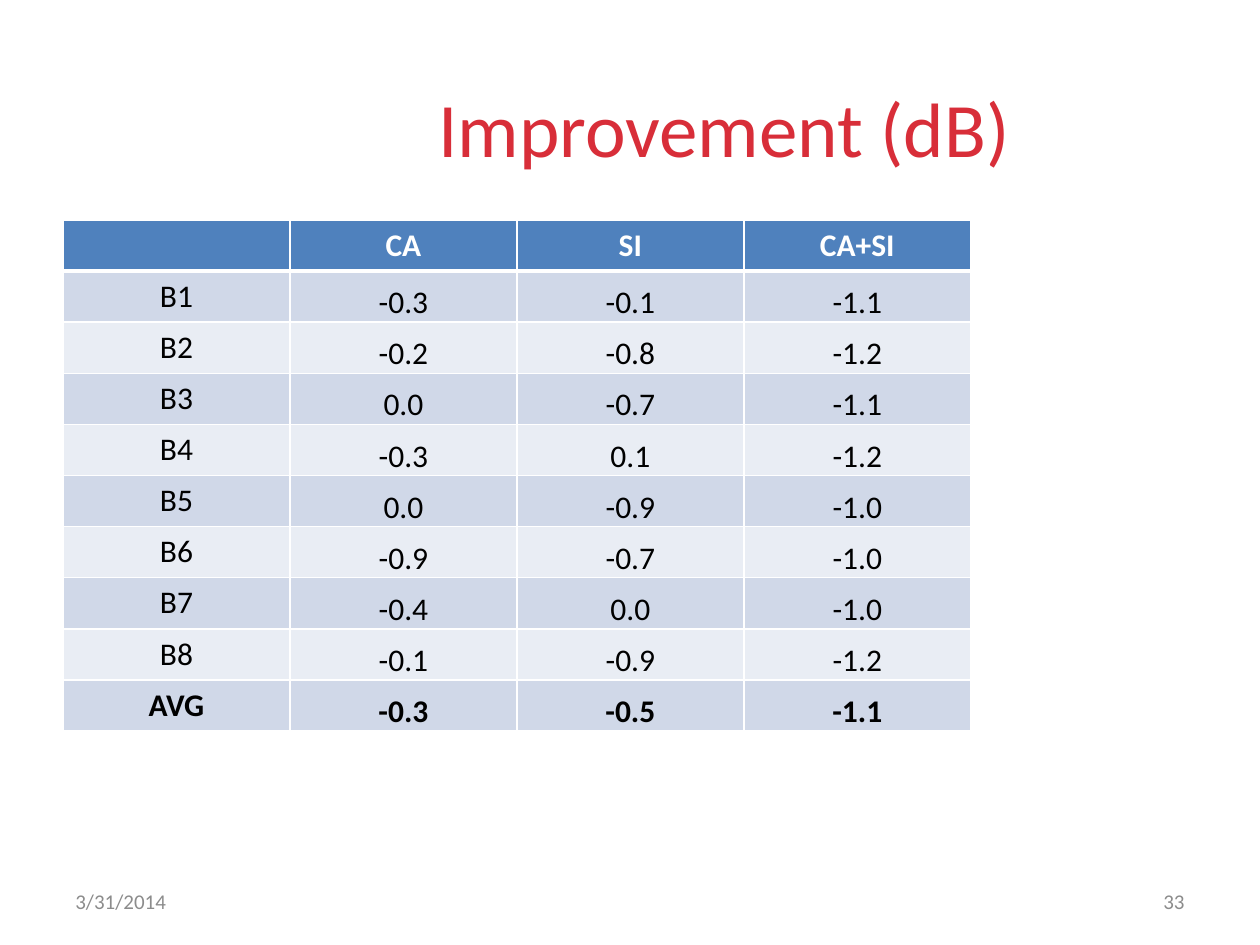
from lxml.etree import SubElement
from pptx import Presentation
from pptx.dml.color import RGBColor
from pptx.enum.text import MSO_ANCHOR, PP_ALIGN
from pptx.oxml.ns import qn
from pptx.util import Pt

TITLE = "Improvement (dB)"
DATE = "3/31/2014"
PAGE_NUMBER = "33"
ROWS = [
    ("", "CA", "SI", "CA+SI"),
    ("B1", "-0.3", "-0.1", "-1.1"),
    ("B2", "-0.2", "-0.8", "-1.2"),
    ("B3", "0.0", "-0.7", "-1.1"),
    ("B4", "-0.3", "0.1", "-1.2"),
    ("B5", "0.0", "-0.9", "-1.0"),
    ("B6", "-0.9", "-0.7", "-1.0"),
    ("B7", "-0.4", "0.0", "-1.0"),
    ("B8", "-0.1", "-0.9", "-1.2"),
    ("AVG", "-0.3", "-0.5", "-1.1"),
]

FONT = "Calibri"
RED = RGBColor(0xD8, 0x2E, 0x39)
GRAY = RGBColor(0x8C, 0x8C, 0x8C)
WHITE = RGBColor(0xFF, 0xFF, 0xFF)
BLACK = RGBColor(0x00, 0x00, 0x00)
HEADER_BLUE = RGBColor(0x4F, 0x81, 0xBD)
BANDS = [RGBColor(0xE9, 0xED, 0xF4), RGBColor(0xD0, 0xD8, 0xE8)]

EMU_PER_PX = 914400 // 126
COLUMN_WIDTH, ROW_HEIGHT = 227, 51


def px(length):
    return round(length * EMU_PER_PX)


def write(frame, text, size, color, align, bold=False):
    para = frame.paragraphs[0]
    para.alignment = align
    if text:
        span = para.add_run()
        span.text = text
        span.font.name = FONT
        span.font.size = Pt(size)
        span.font.bold = bold
        span.font.color.rgb = color


def add_footer(page, text, left, width, align):
    box = page.shapes.add_textbox(px(left), px(876), px(width), px(50))
    box.text_frame.word_wrap = True
    box.text_frame.vertical_anchor = MSO_ANCHOR.MIDDLE
    write(box.text_frame, text, 12, GRAY, align)


def add_borders(cell, top, bottom):
    """Draw white borders; call before the fill is set, as the XML order requires."""
    properties = cell._tc.get_or_add_tcPr()
    for side, points in (("L", 1), ("R", 1), ("T", top), ("B", bottom)):
        line = SubElement(properties, qn(f"a:ln{side}"), w=str(Pt(points)))
        fill = SubElement(line, qn("a:solidFill"))
        SubElement(fill, qn("a:srgbClr"), val=str(WHITE))


def format_cell(cell, text, row, column):
    header = row == 0
    add_borders(cell, 3 if row == 1 else 1, 3 if header else 1)
    cell.fill.solid()
    cell.fill.fore_color.rgb = HEADER_BLUE if header else BANDS[row % 2]
    if not header and column > 0:
        cell.vertical_anchor = MSO_ANCHOR.BOTTOM
        cell.margin_left = cell.margin_right = cell.margin_top = px(1)
        cell.margin_bottom = 0
    write(cell.text_frame, text, 18, WHITE if header else BLACK,
          PP_ALIGN.CENTER, bold=row in (0, len(ROWS) - 1))


def add_results(page):
    columns = len(ROWS[0])
    table = page.shapes.add_table(
        len(ROWS), columns, px(63), px(220),
        px(COLUMN_WIDTH * columns), px(ROW_HEIGHT * len(ROWS))).table
    for column in table.columns:
        column.width = px(COLUMN_WIDTH)
    for row, texts in enumerate(ROWS):
        table.rows[row].height = px(ROW_HEIGHT)
        for column, text in enumerate(texts):
            format_cell(table.cell(row, column), text, row, column)


def main():
    deck = Presentation()
    deck.slide_width, deck.slide_height = px(1260), px(945)
    page = deck.slides.add_slide(deck.slide_layouts[5])

    title = page.shapes.title
    title.left, title.top, title.width, title.height = map(px, (252, 58, 945, 137))
    title.text_frame.vertical_anchor = MSO_ANCHOR.MIDDLE
    write(title.text_frame, TITLE, 44, RED, PP_ALIGN.CENTER)

    add_results(page)
    add_footer(page, DATE, 63, 252, PP_ALIGN.LEFT)
    add_footer(page, PAGE_NUMBER, 977, 220, PP_ALIGN.RIGHT)
    deck.save("out.pptx")


if __name__ == "__main__":
    main()
